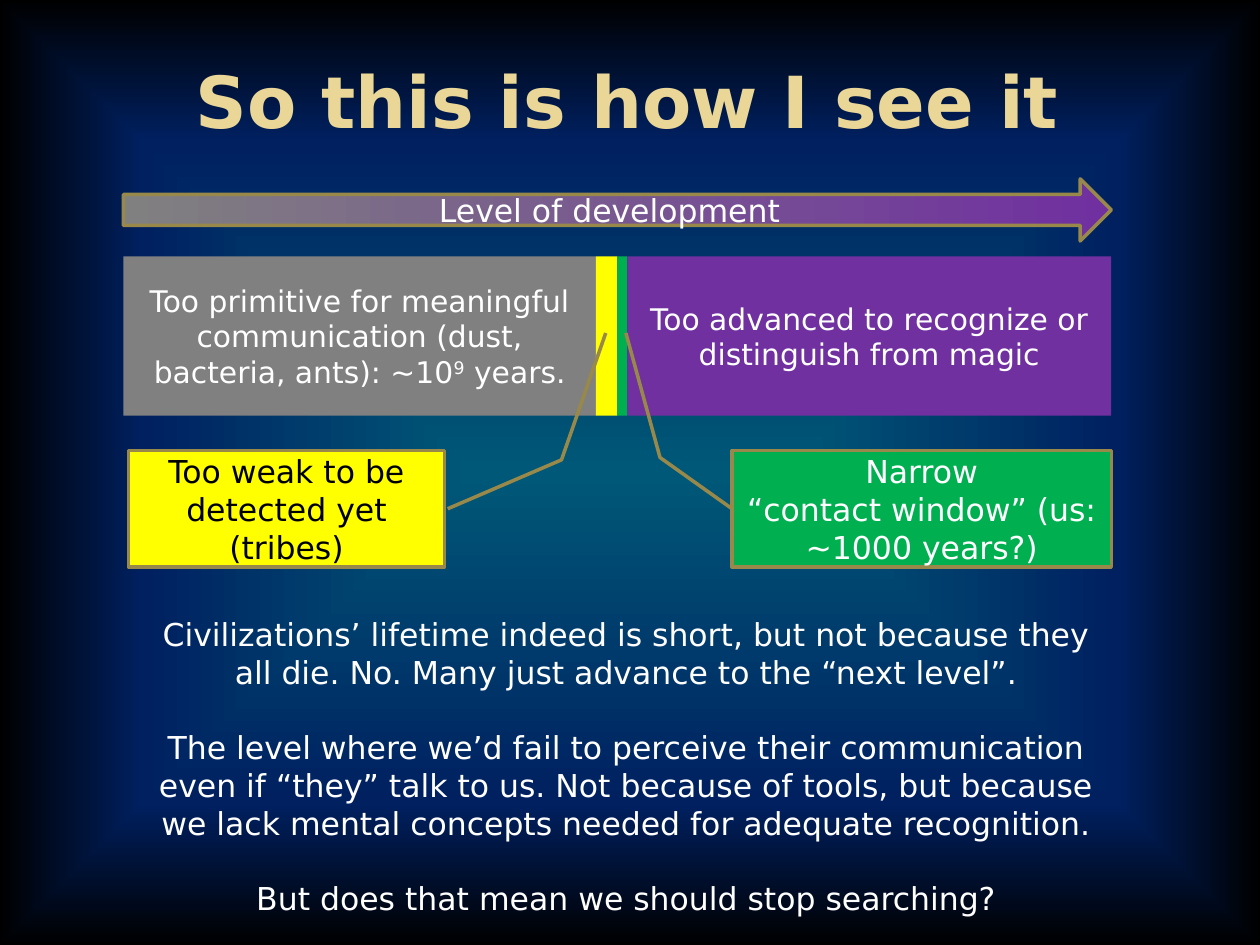
from itertools import accumulate

from lxml import etree
from pptx import Presentation
from pptx import util as u
from pptx.dml.color import RGBColor
from pptx.enum import shapes, text
from pptx.oxml.ns import qn

COLORS = {"white": "FFFFFF", "black": "000000", "gold": "EAD696", "rim": "98894B",
          "gray": "808080", "yellow": "FFFF00", "green": "00B050", "purple": "7030A0",
          "teal": "005878", "navy": "002060"}
FONT = "DejaVu Sans"
COLS, ROWS = 100, 75
CELL = u.Inches(0.1)
SHAPE = shapes.MSO_SHAPE


def rgb(name):
    """Return the palette colour of that name."""
    return RGBColor.from_string(COLORS[name])


def grid(box):
    """Turn columns and rows into slide lengths."""
    return [round(v * CELL) for v in box]


def put_text(sp, paragraphs, size, color="white", anchor="MIDDLE", gap=0, bold=False):
    """Write centred paragraphs; each is a list of (text, baseline) runs or a string."""
    tf = sp.text_frame
    frame = {"word_wrap": True, "vertical_anchor": getattr(text.MSO_ANCHOR, anchor)}
    for key, value in frame.items():
        setattr(tf, key, value)
    for i, runs in enumerate(paragraphs):
        p = tf.add_paragraph() if i else tf.paragraphs[0]
        p.alignment = text.PP_ALIGN.CENTER
        if i and gap:
            p.space_before = u.Pt(gap)
        for words, baseline in [(runs, 0)] if isinstance(runs, str) else runs:
            r = p.add_run()
            r.text = words
            for key, value in {"name": FONT, "size": u.Pt(size), "bold": bold}.items():
                setattr(r.font, key, value)
            r.font.color.rgb = rgb(color)
            if baseline:
                r.font._element.set("baseline", str(baseline * 1000))


def add_box(s, kind, box, fill, rim=False):
    """Add a flat preset shape, rimmed on request; two fill names make a gradient."""
    sp = s.shapes.add_shape(kind, *grid(box))
    sp.shadow.inherit = False
    if isinstance(fill, str):
        sp.fill.solid()
        sp.fill.fore_color.rgb = rgb(fill)
    else:
        sp.fill.gradient()
        sp.fill.gradient_angle = 0
        for stop, name, pos in zip(sp.fill.gradient_stops, fill, (0, 1)):
            stop.color.rgb, stop.position = rgb(name), pos
    if rim:
        sp.line.color.rgb = rgb("rim")
        sp.line.width = u.Pt(2)
    else:
        sp.line.fill.background()
    return sp


def add_background(s, stops):
    """Fill the background with a gradient that spreads from the centre."""
    s.background.fill.gradient()
    grad = s._element.find(".//" + qn("a:gradFill"))
    for child in list(grad):
        grad.remove(child)
    gs_list = etree.SubElement(grad, qn("a:gsLst"))
    for name, share in stops:
        gs = etree.SubElement(gs_list, qn("a:gs"), pos=str(share * 1000))
        etree.SubElement(gs, qn("a:srgbClr"), val=COLORS[name])
    spread = etree.SubElement(grad, qn("a:path"), path="rect")
    etree.SubElement(spread, qn("a:fillToRect"), **dict.fromkeys("ltrb", "50000"))


def add_words(s, box, paragraphs, size, **style):
    """Place a text box in the given box."""
    sp = s.shapes.add_textbox(*grid(box))
    put_text(sp, paragraphs, size, **style)
    return sp


def add_bands(s, box, bands):
    """Split the box into side-by-side bands of the given widths."""
    x, y, w, h = box
    widths = [band[0] for band in bands]
    unit = w / sum(widths)
    for left, (width, fill, paragraphs) in zip(accumulate([0] + widths), bands):
        sp = add_box(s, SHAPE.RECTANGLE, (x + left * unit, y, width * unit, h), fill)
        put_text(sp, paragraphs, 17)


def add_callout(s, box, fill, color, paragraphs, pointer):
    """Add a callout whose bent pointer is given as shares of its box."""
    sp = add_box(s, SHAPE.LINE_CALLOUT_2, box, fill, rim=True)
    for i, value in enumerate(pointer):
        sp.adjustments[i] = value
    put_text(sp, paragraphs, 18, color)


def add_timeline(s, box):
    """Draw the development arrow, the bands and their two callouts in the box."""
    x, y, w, h = box
    arrow = add_box(s, SHAPE.RIGHT_ARROW, (x, y, w, h * 0.16), ("gray", "purple"), rim=True)
    put_text(arrow, ["Level of development"], 18)
    primitive = [("Too primitive for meaningful communication (dust, bacteria, ants): ~10", 0),
                 ("9", 30), (" years.", 0)]
    add_bands(s, (x, y + h * 0.2, w, h * 0.41), [
        (37.5, "gray", [primitive]),
        (1.7, "yellow", []),
        (0.8, "green", []),
        (38.4, "purple", ["Too advanced to recognize or distinguish from magic"])])
    top, tall = y + h * 0.7, h * 0.3
    add_callout(s, (x + 0.4, top, w * 0.32, tall), "yellow", "black",
                ["Too weak to be detected yet (tribes)"],
                (0.5, 1.01, 0.08, 1.37, -1.01, 1.51))
    wide = 30.1
    add_callout(s, (x + w - wide, top, wide, tall), "green", "white",
                ["Narrow", "“contact window” (us: ~1000 years?)"],
                (0.5, 0, 0.06, -0.19, -1.01, -0.28))


def main():
    """Build the slide and save it."""
    prs = Presentation()
    prs.slide_width, prs.slide_height = COLS * CELL, ROWS * CELL
    s = prs.slides.add_slide(prs.slide_layouts[6])
    add_background(s, [("teal", 0), ("navy", 70), ("black", 100)])
    add_words(s, (4.8, 1.7, 90, 12.5), ["So this is how I see it"], 41, color="gold", bold=True)
    add_timeline(s, (9.8, 14.2, 78.4, 30.8))
    body = add_words(s, (10.5, 48.3, 78.4, 25.2), [
        "Civilizations’ lifetime indeed is short, but not because they all die. No. "
        "Many just advance to the “next level”.",
        "The level where we’d fail to perceive their communication even if “they” talk to us. "
        "Not because of tools, but because we lack mental concepts needed for adequate "
        "recognition.",
        "But does that mean we should stop searching?"], 18, anchor="TOP", gap=21.5)
    body.text_frame.auto_size = text.MSO_AUTO_SIZE.SHAPE_TO_FIT_TEXT
    prs.save("out.pptx")


if __name__ == "__main__":
    main()
